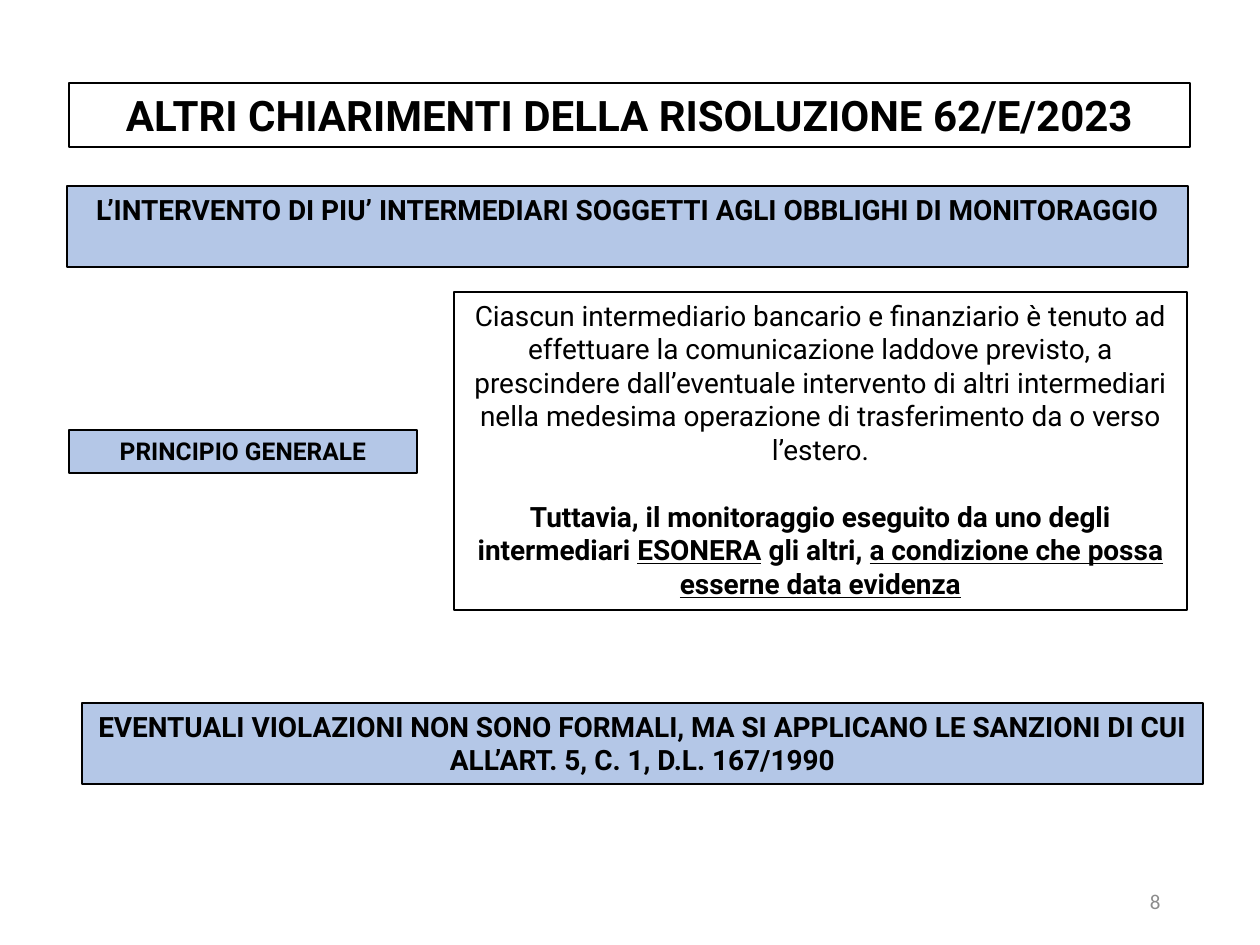
"""Build the slide on the clarifications of resolution 62/E/2023."""
import pptx
import pptx.dml.color
import pptx.enum.shapes
import pptx.enum.text
import pptx.util

SCALE = 914400 // 126
BLACK = pptx.dml.color.RGBColor(0, 0, 0)
WHITE = pptx.dml.color.RGBColor(255, 255, 255)
BLUE = pptx.dml.color.RGBColor(0xB4, 0xC7, 0xE7)
GREY = pptx.dml.color.RGBColor(0x8C, 0x8C, 0x8C)
ALIGN = pptx.enum.text.PP_ALIGN
ANCHOR = pptx.enum.text.MSO_ANCHOR

HEAD = "ALTRI CHIARIMENTI DELLA RISOLUZIONE 62/E/2023"
TOPIC = "L’INTERVENTO DI PIU’ INTERMEDIARI SOGGETTI AGLI OBBLIGHI DI MONITORAGGIO"
LABEL = "PRINCIPIO GENERALE"
RULE = (
    "Ciascun intermediario bancario e finanziario è tenuto ad effettuare la "
    "comunicazione laddove previsto, a prescindere dall’eventuale intervento di "
    "altri intermediari nella medesima operazione di trasferimento da o verso l’estero."
)
LIMIT = [
    ("Tuttavia, il monitoraggio eseguito da uno degli intermediari ", False),
    ("ESONERA", True),
    (" gli altri, ", False),
    ("a condizione che possa esserne data evidenza", True),
]
PENALTY = (
    "EVENTUALI VIOLAZIONI NON SONO FORMALI, MA SI APPLICANO LE SANZIONI "
    "DI CUI ALL’ART. 5, C. 1, D.L. 167/1990"
)


def px(*sizes):
    return [pptx.util.Emu(size * SCALE) for size in sizes]


def style(para, size, bold=False, font="Roboto", color=BLACK, align=ALIGN.CENTER):
    para.alignment = align
    for run in para.runs:
        run.font.name = font
        run.font.size = pptx.util.Pt(size)
        run.font.bold = bold
        run.font.color.rgb = color


def setup(frame, anchor=ANCHOR.TOP):
    frame.word_wrap = True
    frame.auto_size = pptx.enum.text.MSO_AUTO_SIZE.NONE
    frame.vertical_anchor = anchor


def border(shape, width):
    shape.line.color.rgb = BLACK
    shape.line.width = pptx.util.Pt(width)


def add_title(slide, text, box):
    title = slide.shapes.title
    title.left, title.top, title.width, title.height = px(*box)
    title.fill.solid()
    title.fill.fore_color.rgb = WHITE
    border(title, 1)
    frame = title.text_frame
    frame.text = text
    setup(frame, ANCHOR.MIDDLE)
    inset = pptx.util.Inches(0.05)
    frame.margin_left = frame.margin_right = inset
    frame.margin_top = frame.margin_bottom = inset
    style(frame.paragraphs[0], 24, True)


def add_box(slide, text, box, size=16, fill=BLUE, bold=True):
    shape = slide.shapes.add_shape(
        pptx.enum.shapes.MSO_SHAPE.RECTANGLE, *px(*box))
    shape.shadow.inherit = False
    if fill is None:
        shape.fill.background()
    else:
        shape.fill.solid()
        shape.fill.fore_color.rgb = fill
    border(shape, 0.75)
    shape.text_frame.text = text
    setup(shape.text_frame)
    style(shape.text_frame.paragraphs[0], size, bold)
    return shape


def add_runs(shape, parts, size, gap):
    para = shape.text_frame.add_paragraph()
    para.space_before = pptx.util.Pt(gap)
    for text, under in parts:
        run = para.add_run()
        run.text = text
        run.font.underline = under
    style(para, size, True)


def add_page(slide, text, box):
    frame = slide.shapes.add_textbox(*px(*box)).text_frame
    frame.text = text
    setup(frame, ANCHOR.MIDDLE)
    style(frame.paragraphs[0], 12, font="Calibri", color=GREY, align=ALIGN.RIGHT)


def main():
    deck = pptx.Presentation()
    deck.slide_width, deck.slide_height = px(1260, 945)
    slide = deck.slides.add_slide(deck.slide_layouts[5])
    add_title(slide, HEAD, (69, 83, 1121, 64))
    add_box(slide, TOPIC, (67, 186, 1121, 81))
    body = add_box(slide, RULE, (454, 292, 733, 318), fill=None, bold=False)
    add_runs(body, LIMIT, 16, 19)
    add_box(slide, LABEL, (69, 430, 348, 43), size=14)
    add_box(slide, PENALTY, (82, 703, 1121, 81))
    add_page(slide, "8", (890, 876, 283, 50))
    deck.save("out.pptx")


if __name__ == "__main__":
    main()
